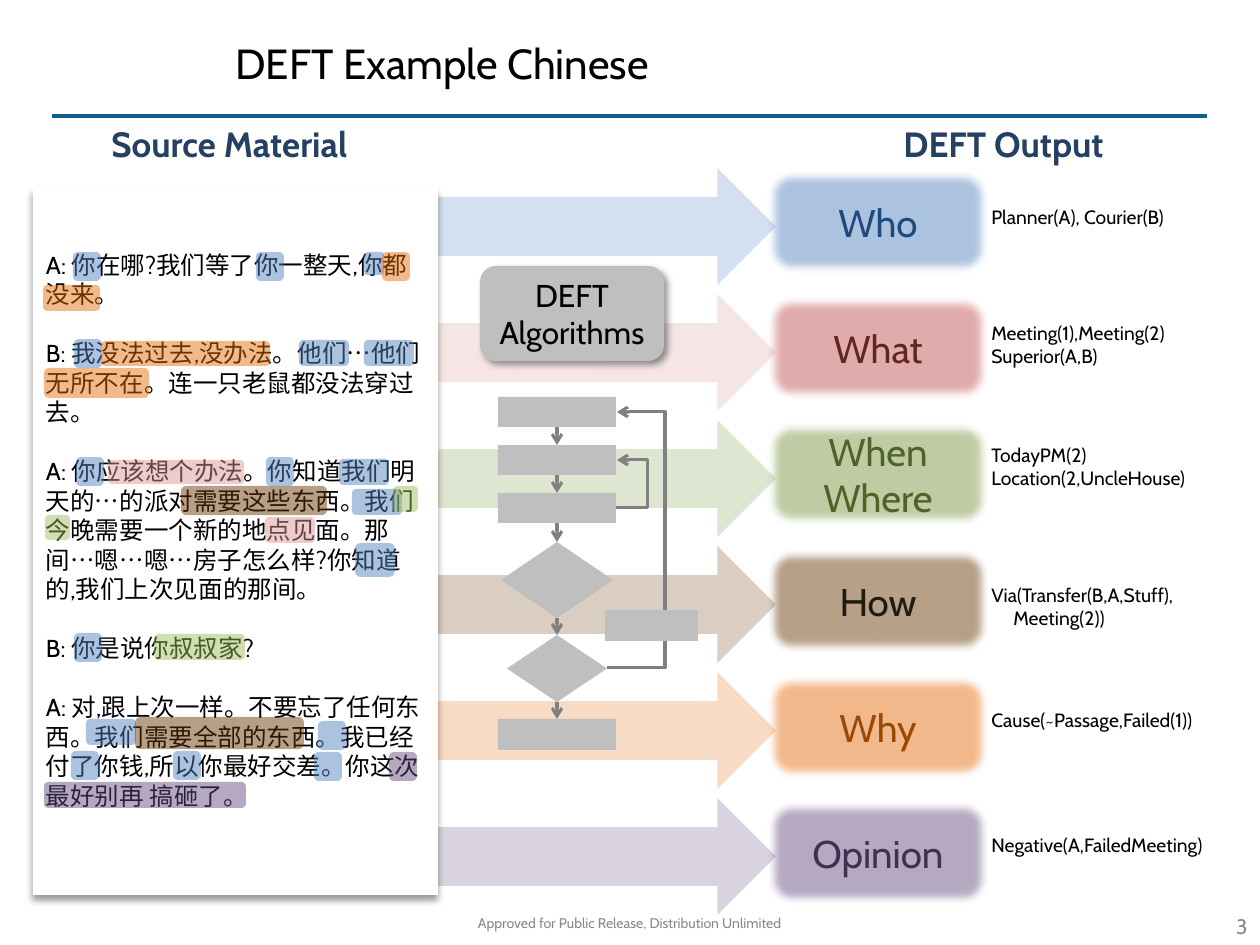
from lxml import etree
from pptx import Presentation
from pptx import util as u
from pptx.dml.color import RGBColor
from pptx.enum import shapes, text
from pptx.oxml import ns

SCALE = 914400 / 126
FONT = "Cabin"
BLACK = RGBColor(0, 0, 0)
WHITE = RGBColor(0xFF, 0xFF, 0xFF)
NAVY = RGBColor(0x25, 0x40, 0x61)
RULE = RGBColor(0x0F, 0x5E, 0x90)
SILVER = RGBColor(0xBF, 0xBF, 0xBF)
GREY = RGBColor(0x80, 0x80, 0x80)
FOOTER = RGBColor(0x89, 0x89, 0x89)
BLUE = RGBColor(0x4F, 0x81, 0xBD)
RED = RGBColor(0xC0, 0x50, 0x4D)
PINK = RGBColor(0xD9, 0x96, 0x94)
GREEN = RGBColor(0x77, 0x93, 0x3C)
LIME = RGBColor(0x9B, 0xBB, 0x59)
BROWN = RGBColor(0x66, 0x33, 0x00)
ORANGE = RGBColor(0xE4, 0x6C, 0x0A)
PURPLE = RGBColor(0x60, 0x4A, 0x7B)
WHO_TEXT = RGBColor(0x1F, 0x49, 0x7D)
WHAT_TEXT = RGBColor(0x63, 0x25, 0x23)
WHERE_TEXT = RGBColor(0x4F, 0x62, 0x28)
HOW_TEXT = RGBColor(0x1E, 0x1C, 0x11)
WHY_TEXT = RGBColor(0x98, 0x48, 0x07)
OPINION_TEXT = RGBColor(0x40, 0x31, 0x52)

SHAPE = shapes.MSO_SHAPE
LEFT, CENTER, RIGHT = text.PP_ALIGN.LEFT, text.PP_ALIGN.CENTER, text.PP_ALIGN.RIGHT
TOP, MIDDLE = text.MSO_ANCHOR.TOP, text.MSO_ANCHOR.MIDDLE

DIALOGUE = [
    "A: 你在哪?我们等了你一整天,你都没来。",
    "B: 我没法过去,没办法。他们…他们无所不在。连一只老鼠都没法穿过去。",
    "A: 你应该想个办法。你知道我们明天的…的派对需要这些东西。我们今晚需要一个新的地点见面。"
    "那间…嗯…嗯…房子怎么样?你知道的,我们上次见面的那间。",
    "B: 你是说你叔叔家?",
    "A: 对,跟上次一样。不要忘了任何东西。我们需要全部的东西。我已经付了你钱,所以你最好交差。"
    "你这次最好别再 搞砸了。",
]

CATEGORIES = [
    (["Who"], BLUE, BLUE, WHO_TEXT, ["Planner(A), Courier(B)"], 199),
    (["What"], PINK, RED, WHAT_TEXT, ["Meeting(1),Meeting(2)", "Superior(A,B)"], 315),
    (["When", "Where"], GREEN, GREEN, WHERE_TEXT, ["TodayPM(2) Location(2,UncleHouse)"], 437),
    (["How"], BROWN, BROWN, HOW_TEXT, ["Via(Transfer(B,A,Stuff),", "Meeting(2))"], 577),
    (["Why"], ORANGE, ORANGE, WHY_TEXT, ["Cause(~Passage,Failed(1))"], 702),
    (["Opinion"], PURPLE, PURPLE, OPINION_TEXT, ["Negative(A,FailedMeeting)"], 827),
]

HIGHLIGHTS = {
    BLUE: [(73, 252, 28, 29), (256, 252, 28, 29), (364, 252, 20, 23), (74, 339, 28, 29),
           (299, 340, 50, 26), (364, 340, 50, 26), (76, 457, 28, 29), (266, 457, 28, 29),
           (339, 459, 50, 26), (352, 489, 50, 26), (355, 543, 40, 34), (74, 633, 28, 29),
           (86, 719, 50, 26), (318, 721, 28, 29), (71, 751, 28, 29), (173, 751, 28, 29),
           (314, 752, 28, 29)],
    ORANGE: [(43, 285, 57, 26), (382, 252, 28, 29), (101, 341, 169, 25), (44, 368, 105, 30)],
    PINK: [(108, 460, 136, 24), (265, 517, 50, 26)],
    BROWN: [(181, 486, 146, 29), (135, 717, 169, 32)],
    LIME: [(45, 515, 25, 25), (154, 634, 91, 26), (393, 486, 25, 26)],
    PURPLE: [(44, 782, 202, 26), (389, 752, 28, 29)],
}


def px(n):
    return u.Emu(round(n * SCALE))


def add_xml(parent, tag, **attrs):
    return etree.SubElement(parent, ns.qn(tag), {k: str(v) for k, v in attrs.items()})


def write(s, lines, size, color, align=LEFT, anchor=MIDDLE, bold=False, gap=0):
    tf = s.text_frame
    tf.word_wrap = True
    tf.vertical_anchor = anchor
    for i, line in enumerate(lines):
        p = tf.paragraphs[0] if i == 0 else tf.add_paragraph()
        p.text = line
        p.alignment = align
        if i and gap:
            p.space_before = u.Pt(gap)
        p.font.name, p.font.size, p.font.bold = FONT, u.Pt(size), bold
        p.font.color.rgb = color
    return tf


def add_label(sp, box, lines, size, color, **style):
    s = sp.add_textbox(*map(px, box))
    return write(s, lines, size, color, **style)


def add_block(sp, kind, box, color, alpha=None):
    s = sp.add_shape(kind, *map(px, box))
    s.shadow.inherit = False
    s.fill.solid()
    s.fill.fore_color.rgb = color
    s.line.fill.background()
    if alpha:
        fill = s._element.spPr.find(ns.qn("a:solidFill"))
        add_xml(fill[0], "a:alpha", val=alpha * 1000)
    return s


def add_effect(s, tag, **attrs):
    return add_xml(s._element.spPr.find(ns.qn("a:effectLst")), tag, **attrs)


def add_shadow(s, degrees):
    shadow = add_effect(s, "a:outerShdw", blurRad=u.Pt(4), dist=u.Pt(3),
                        dir=degrees * 60000, algn="tl", rotWithShape=0)
    add_xml(add_xml(shadow, "a:srgbClr", val=BLACK), "a:alpha", val=40000)


def add_line(sp, start, end, color, arrow=False, via=None):
    kind = shapes.MSO_CONNECTOR.ELBOW if via else shapes.MSO_CONNECTOR.STRAIGHT
    s = sp.add_connector(kind, *map(px, start + end))
    s.line.color.rgb = color
    s.line.width = u.Pt(1.75)
    spPr = s._element.spPr
    if arrow:
        add_xml(spPr.find(ns.qn("a:ln")), "a:tailEnd", type="arrow")
    if via:
        bend = round((via - start[0]) / (end[0] - start[0]) * 100000)
        guides = spPr.find(ns.qn("a:prstGeom")).find(ns.qn("a:avLst"))
        add_xml(guides, "a:gd", name="adj1", fmla=f"val {bend}")
    add_xml(spPr, "a:effectLst")
    return s


def add_categories(sp):
    for i, (names, arrow, fill, color, output, y) in enumerate(CATEGORIES):
        add_block(sp, SHAPE.RIGHT_ARROW, (375, 168 + 126 * i, 401, 117), arrow, 24)
        box = (767, 170 + round(126.2 * i), 222, 105)
        s = add_block(sp, SHAPE.ROUNDED_RECTANGLE, box, fill, 47)
        add_effect(s, "a:softEdge", rad=u.Pt(5))
        write(s, names, 22, color, align=CENTER)
        height = 37 if i in (0, 4, 5) else 59
        tf = add_label(sp, (979, y, 301, height), output, 11, BLACK, anchor=TOP)
        if names == ["How"]:
            tf.paragraphs[1]._p.get_or_add_pPr().set("marL", str(px(22)))


def add_flowchart(sp):
    s = add_block(sp, SHAPE.ROUNDED_RECTANGLE, (480, 266, 184, 95), SILVER)
    add_shadow(s, 45)
    write(s, ["DEFT Algorithms"], 18, BLACK, align=CENTER)
    steps = [add_block(sp, kind, box, SILVER) for kind, box in [
        (SHAPE.RECTANGLE, (498, 397, 118, 30)),
        (SHAPE.RECTANGLE, (498, 445, 118, 30)),
        (SHAPE.RECTANGLE, (498, 493, 118, 30)),
        (SHAPE.FLOWCHART_DECISION, (501, 542, 112, 76)),
        (SHAPE.FLOWCHART_DECISION, (507, 635, 100, 67)),
        (SHAPE.RECTANGLE, (498, 719, 118, 31)),
    ]]
    for upper, lower in zip(steps, steps[1:]):
        c = add_line(sp, (557, 427), (557, 445), GREY, arrow=True)
        c.begin_connect(upper, 2)
        c.end_connect(lower, 0)
    add_line(sp, (616, 508), (617, 460), GREY, arrow=True, via=648)
    add_line(sp, (607, 668), (617, 412), GREY, arrow=True, via=665)
    add_block(sp, SHAPE.RECTANGLE, (605, 610, 93, 31), SILVER)


def add_source(sp):
    s = add_block(sp, SHAPE.RECTANGLE, (33, 188, 405, 707), WHITE)
    add_shadow(s, 90)
    tf = write(s, DIALOGUE, 14, BLACK, gap=17)
    tf.margin_left = tf.margin_right = px(13)
    tf.margin_top, tf.margin_bottom = px(6), px(29)
    for color, boxes in HIGHLIGHTS.items():
        for box in boxes:
            add_block(sp, SHAPE.ROUNDED_RECTANGLE, box, color, 47)


def main():
    prs = Presentation()
    prs.slide_width, prs.slide_height = px(1260), px(945)
    sp = prs.slides.add_slide(prs.slide_layouts[6]).shapes
    add_line(sp, (52, 116), (1207, 116), RULE)
    add_label(sp, (223, 21, 984, 84), ["DEFT Example Chinese"], 24, BLACK)
    add_categories(sp)
    add_flowchart(sp)
    add_source(sp)
    add_label(sp, (34, 107, 391, 72), ["Source Material"], 20, NAVY, align=CENTER, bold=True)
    add_label(sp, (821, 107, 365, 72), ["DEFT Output"], 20, NAVY, align=CENTER, bold=True)
    add_label(sp, (184, 902, 892, 42), ["Approved for Public Release, Distribution Unlimited"],
              8, FOOTER, align=CENTER)
    add_label(sp, (1134, 907, 126, 38), ["3"], 12, FOOTER, align=RIGHT)
    prs.save("out.pptx")


if __name__ == "__main__":
    main()
